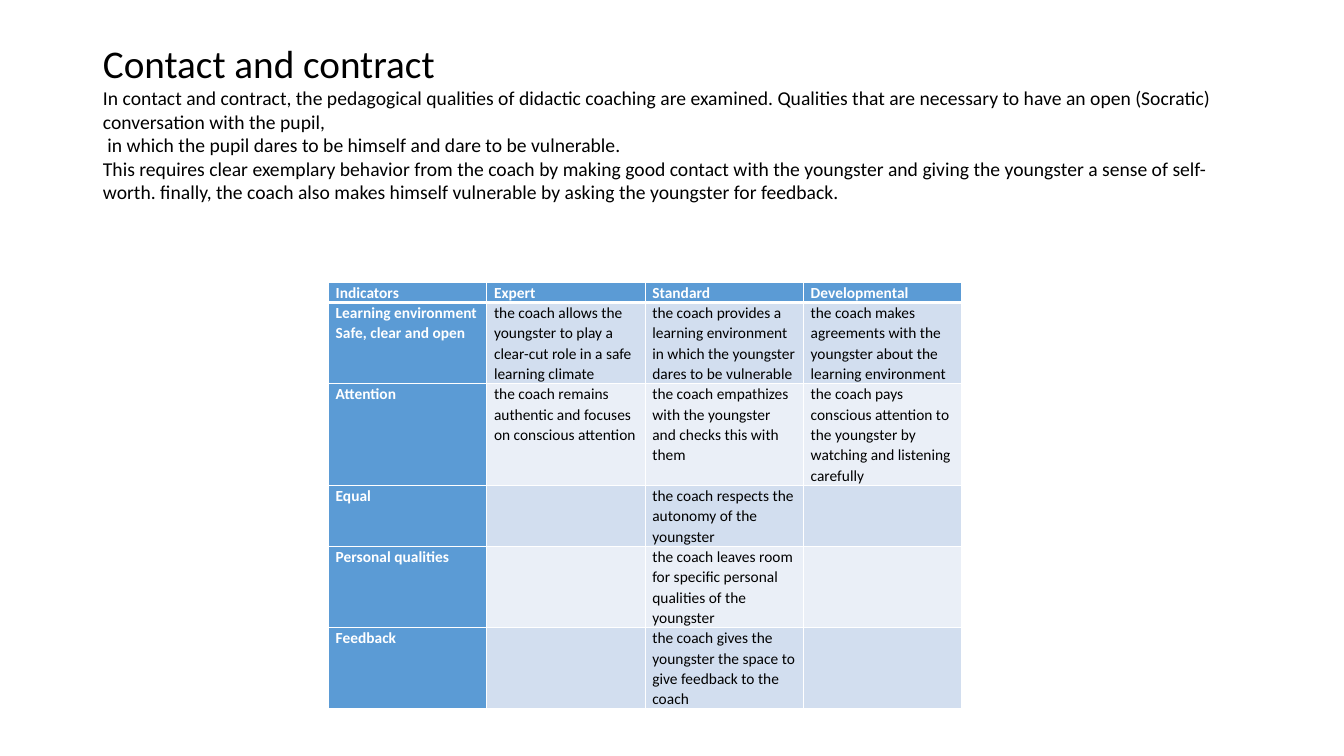
"""Build the "Contact and contract" slide with its coaching rubric table."""
import dataclasses

import lxml.etree
import pptx
import pptx.dml.color
import pptx.enum.text
import pptx.oxml.ns
import pptx.util

Cm = pptx.util.Cm
Pt = pptx.util.Pt

HEADING = "Contact and contract"
INTRODUCTION = [
    "In contact and contract, the pedagogical qualities of didactic coaching are examined. "
    "Qualities that are necessary to have an open (Socratic) conversation with the pupil,",
    " in which the pupil dares to be himself and dare to be vulnerable.",
    "This requires clear exemplary behavior from the coach by making good contact with the "
    "youngster and giving the youngster a sense of self-worth. finally, the coach also makes "
    "himself vulnerable by asking the youngster for feedback.",
]
RUBRIC = [
    ["Indicators", "Expert", "Standard", "Developmental"],
    ["Learning environment\nSafe, clear and open",
     "the coach allows the youngster to play a clear-cut role in a safe learning climate",
     "the coach provides a learning environment in which the youngster dares to be vulnerable",
     "the coach makes agreements with the youngster about the learning environment"],
    ["Attention",
     "the coach remains authentic and focuses on conscious attention",
     "the coach empathizes with the youngster and checks this with them",
     "the coach pays conscious attention to the youngster by watching and listening carefully"],
    ["Equal", "", "the coach respects the autonomy of the youngster", ""],
    ["Personal qualities", "",
     "the coach leaves room for specific personal qualities of the youngster", ""],
    ["Feedback", "",
     "the coach gives the youngster the space to give feedback to the coach", ""],
]
LINES_PER_ROW = [1, 4, 5, 3, 4, 4]


@dataclasses.dataclass(frozen=True)
class Theme:
    font: str = "Calibri"
    text: str = "000000"
    header_text: str = "FFFFFF"
    border: str = "FFFFFF"
    header_fill: str = "5B9BD5"
    bands: tuple = ("EAEFF7", "D2DEEF")
    heading_size: int = 28
    introduction_size: int = 14
    table_size: int = 11
    table_spacing: float = 1.07


class SlideBuilder:
    def __init__(self, slide, theme):
        self.slide = slide
        self.theme = theme

    def add_lines(self, paragraph, lines, size, color, bold=False):
        paragraph.alignment = pptx.enum.text.PP_ALIGN.LEFT
        for index, line in enumerate(lines):
            if index:
                paragraph.add_line_break()
            run = paragraph.add_run()
            run.text = line
            run.font.name = self.theme.font
            run.font.size = Pt(size)
            run.font.bold = bold
            run.font.color.rgb = pptx.dml.color.RGBColor.from_string(color)

    def title(self, left, top, width, height, heading, introduction):
        shape = self.slide.shapes.title
        shape.left, shape.top, shape.width, shape.height = left, top, width, height
        frame = shape.text_frame
        frame.word_wrap = True
        frame.auto_size = pptx.enum.text.MSO_AUTO_SIZE.NONE
        frame.vertical_anchor = pptx.enum.text.MSO_ANCHOR.MIDDLE
        frame.margin_top = Cm(0.56)
        theme = self.theme
        self.add_lines(frame.paragraphs[0], [heading], theme.heading_size, theme.text)
        self.add_lines(frame.add_paragraph(), introduction, theme.introduction_size, theme.text)

    def border(self, cell, side, width):
        properties = cell._tc.get_or_add_tcPr()
        qn = pptx.oxml.ns.qn
        line = lxml.etree.SubElement(properties, qn(f"a:ln{side}"), w=str(Pt(width)))
        fill = lxml.etree.SubElement(line, qn("a:solidFill"))
        lxml.etree.SubElement(fill, qn("a:srgbClr"), val=self.theme.border)

    def cell(self, cell, text, row, column):
        theme = self.theme
        header = row == 0 or column == 0
        for side in "LRTB":
            below_header = (row, side) in ((0, "B"), (1, "T"))
            self.border(cell, side, 3 if below_header else 1)
        fill = theme.header_fill if header else theme.bands[row % 2]
        cell.fill.solid()
        cell.fill.fore_color.rgb = pptx.dml.color.RGBColor.from_string(fill)
        cell.margin_left = cell.margin_right = Cm(0.18)
        cell.margin_top = cell.margin_bottom = 0
        if text:
            paragraph = cell.text_frame.paragraphs[0]
            paragraph.line_spacing = theme.table_spacing
            color = theme.header_text if header else theme.text
            self.add_lines(paragraph, text.split("\n"), theme.table_size, color, header)

    def table(self, left, top, column_width, line_height, rows, lines_per_row):
        columns = len(rows[0])
        table = self.slide.shapes.add_table(
            len(rows), columns, left, top,
            column_width * columns, line_height * sum(lines_per_row)).table
        table.first_col = True
        for column in table.columns:
            column.width = column_width
        for row, lines in zip(table.rows, lines_per_row):
            row.height = line_height * lines
        for row, texts in enumerate(rows):
            for column, text in enumerate(texts):
                self.cell(table.cell(row, column), text, row, column)


def main():
    presentation = pptx.Presentation()
    presentation.slide_width = Cm(33.87)
    presentation.slide_height = Cm(19.05)
    slide = presentation.slides.add_slide(presentation.slide_layouts[5])
    builder = SlideBuilder(slide, Theme())
    builder.table(Cm(8.28), Cm(7.11), Cm(3.99), Cm(0.51), RUBRIC, LINES_PER_ROW)
    builder.title(Cm(2.34), Cm(-0.36), Cm(29.67), Cm(6.4), HEADING, INTRODUCTION)
    presentation.save("out.pptx")


if __name__ == "__main__":
    main()
